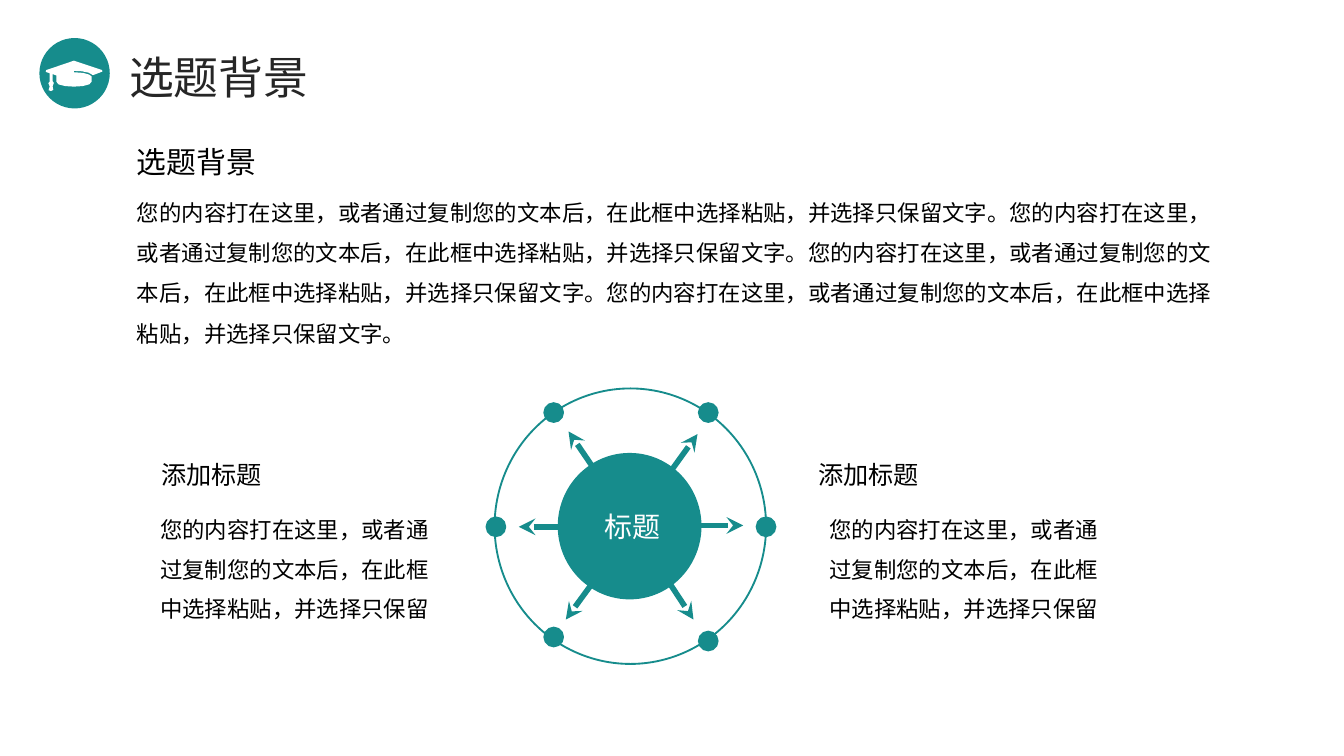
from collections import namedtuple
from dataclasses import dataclass

from lxml.etree import SubElement
from pptx import Presentation
from pptx.dml.color import RGBColor
from pptx.enum.shapes import MSO_CONNECTOR as Connector, MSO_SHAPE as Shape
from pptx.enum.text import MSO_ANCHOR as Anchor, MSO_AUTO_SIZE as AutoSize, PP_ALIGN as Align
from pptx.oxml.ns import qn
from pptx.util import Pt

PX = 9144  # EMU per px, 100 px to the inch
Box = namedtuple("Box", "x y w h")


@dataclass(frozen=True)
class Theme:
    font: str = "Noto Sans CJK SC"
    teal: RGBColor = RGBColor(0x16, 0x8C, 0x8C)
    white: RGBColor = RGBColor(0xFF, 0xFF, 0xFF)
    black: RGBColor = RGBColor(0, 0, 0)
    title_ink: RGBColor = RGBColor(0x26, 0x26, 0x26)
    title: float = 24
    heading: float = 16
    label: float = 15
    subheading: float = 13.5
    body: float = 12
    thin: float = 1
    thick: float = 3


THEME = Theme()
SENTENCE = "您的内容打在这里，或者通过复制您的文本后，在此框中选择粘贴，并选择只保留文字。"
EXCERPT = SENTENCE.removesuffix("文字。")

# Thousandths of an inch from the corner of the badge
CAP_OUTLINE = [
    (45, 232), (250, 162), (460, 232), (462, 243), (392, 270), (360, 251),
    (310, 241), (250, 238), (250, 248), (320, 253), (365, 266), (382, 280),
    (382, 318), (365, 338), (315, 351), (250, 355), (185, 351), (135, 338),
    (120, 318), (120, 272), (92, 262), (92, 315), (101, 328), (92, 352),
    (97, 380), (80, 388), (62, 382), (70, 352), (60, 330), (70, 318),
    (70, 255), (47, 248), (40, 240),
]
# Px from the corner of the ring
DOT_CENTRES = [(159, 18), (44, 18), (1, 103), (202, 103), (159, 188), (44, 185)]
ARROWS = [
    ((102, 102), (151, 34)), ((101, 102), (185, 102)), ((102, 101), (55, 32)),
    ((101, 103), (18, 103)), ((102, 105), (53, 172)), ((104, 105), (148, 172)),
]


def emu(*lengths):
    return [length * PX for length in lengths]


def write(frame, text, size, color, align=Align.LEFT, spacing=None, wrap=True):
    frame.word_wrap = wrap
    frame.auto_size = AutoSize.NONE
    frame.vertical_anchor = Anchor.TOP
    paragraph = frame.paragraphs[0]
    paragraph.alignment = align
    if spacing:
        paragraph.line_spacing = spacing
    run = paragraph.add_run()
    run.text = text
    run.font.size = Pt(size)
    run.font.color.rgb = color
    run.font.name = THEME.font
    SubElement(run.font._element, qn("a:ea"), typeface=THEME.font)


def add_text(slide, box, text, size, color=THEME.black, **style):
    write(slide.shapes.add_textbox(*emu(*box)).text_frame, text, size, color, **style)


def add_ellipse(slide, box, fill=None, line=None):
    ellipse = slide.shapes.add_shape(Shape.OVAL, *emu(*box))
    paint(ellipse, fill, line)


def paint(shape, fill=None, line=None):
    shape.shadow.inherit = False
    if fill is None:
        shape.fill.background()
    else:
        shape.fill.solid()
        shape.fill.fore_color.rgb = fill
    if line is None:
        shape.line.fill.background()
    else:
        shape.line.color.rgb = line
        shape.line.width = Pt(THEME.thin)


def add_arrow(slide, start, tip):
    arrow = slide.shapes.add_connector(Connector.STRAIGHT, *emu(*start, *tip))
    arrow.line.color.rgb = THEME.teal
    arrow.line.width = Pt(THEME.thick)
    SubElement(arrow.line._get_or_add_ln(), qn("a:tailEnd"), type="stealth")
    SubElement(arrow._element.spPr, qn("a:effectLst"))


def header(slide, box):
    badge = Box(box.x, box.y, 51, 51)
    add_ellipse(slide, badge, THEME.teal, THEME.teal)
    builder = slide.shapes.build_freeform(*CAP_OUTLINE[0], scale=PX / 10)
    builder.add_line_segments(CAP_OUTLINE[1:], close=True)
    paint(builder.convert_to_shape(*emu(badge.x, badge.y)), THEME.white)

    title = slide.shapes.title
    title.left, title.top, title.width, title.height = emu(
        box.x + 56, box.y + 3, box.w - 56, box.h - 3)
    write(title.text_frame, "选题背景", THEME.title, THEME.title_ink)


def background_section(slide, box):
    add_text(slide, Box(box.x, box.y, 185, 37), "选题背景", THEME.heading)
    add_text(slide, Box(box.x, box.y + 31, box.w, box.h - 31), SENTENCE * 4,
             THEME.body, spacing=1.5)


def hub_diagram(slide, box):
    """A ring of dots around a labelled hub, with arrows pointing outwards."""
    add_ellipse(slide, box, line=THEME.teal)
    for x, y in DOT_CENTRES:
        add_ellipse(slide, Box(box.x + x - 7, box.y + y - 7, 14, 14), THEME.teal, THEME.teal)
    for start, tip in ARROWS:
        add_arrow(slide, *[(box.x + x, box.y + y) for x, y in (start, tip)])
    add_ellipse(slide, Box(box.x + 47, box.y + 48, 107, 109), THEME.teal)
    add_text(slide, Box(box.x + 72, box.y + 85, 69, 35), "标题", THEME.label,
             THEME.white, wrap=False)


def side_note(slide, box, heading_shift):
    add_text(slide, Box(box.x + heading_shift, box.y, 96, 33), "添加标题",
             THEME.subheading, wrap=False)
    add_text(slide, Box(box.x, box.y + 33, box.w, box.h - 33), EXCERPT,
             THEME.body, align=Align.RIGHT, spacing=Pt(21.1))


def main():
    deck = Presentation()
    deck.slide_width = 1000 * PX
    deck.slide_height = deck.slide_width * 9 // 16
    slide = deck.slides.add_slide(deck.slide_layouts.get_by_name("Title Only"))
    hub_diagram(slide, Box(368, 289, 202, 205))
    background_section(slide, Box(92, 102, 821, 189))
    side_note(slide, Box(602, 337, 225, 131), heading_shift=-3)
    side_note(slide, Box(104, 337, 225, 131), heading_shift=6)
    header(slide, Box(30, 29, 244, 53))
    deck.save("out.pptx")


if __name__ == "__main__":
    main()
